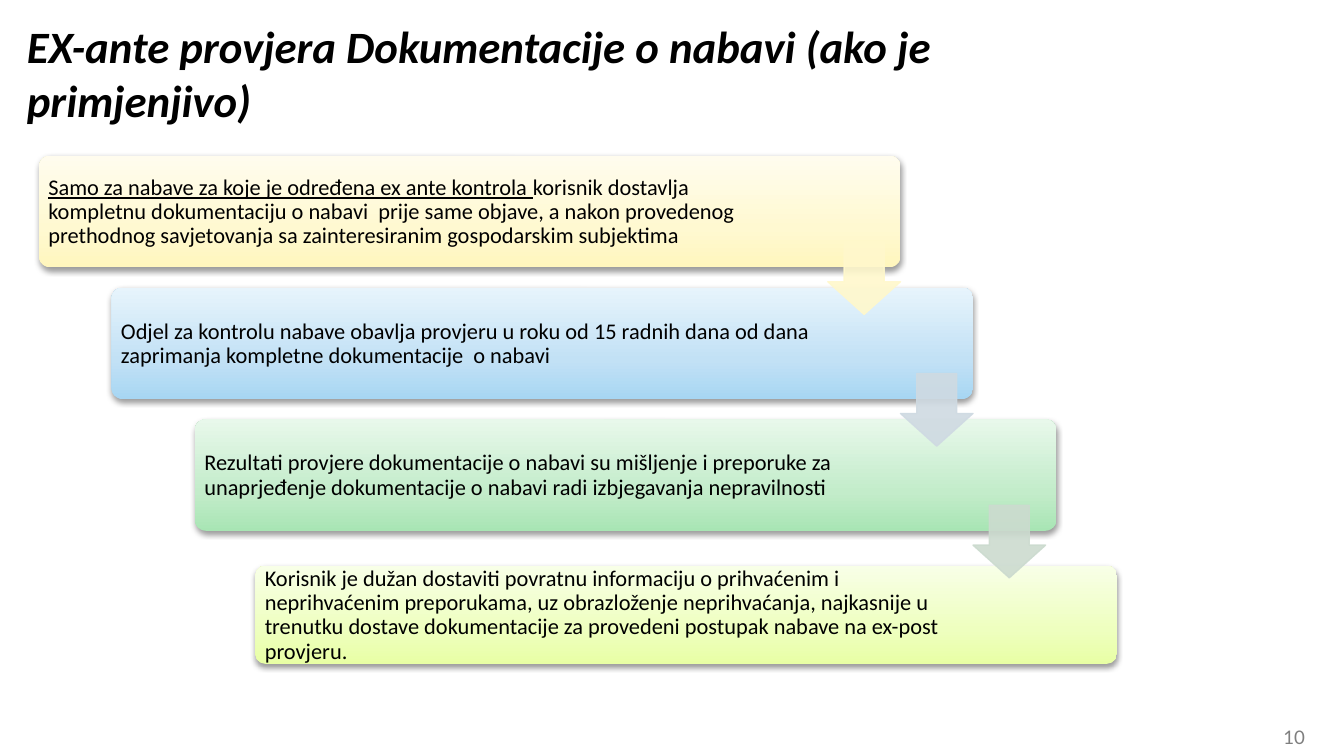
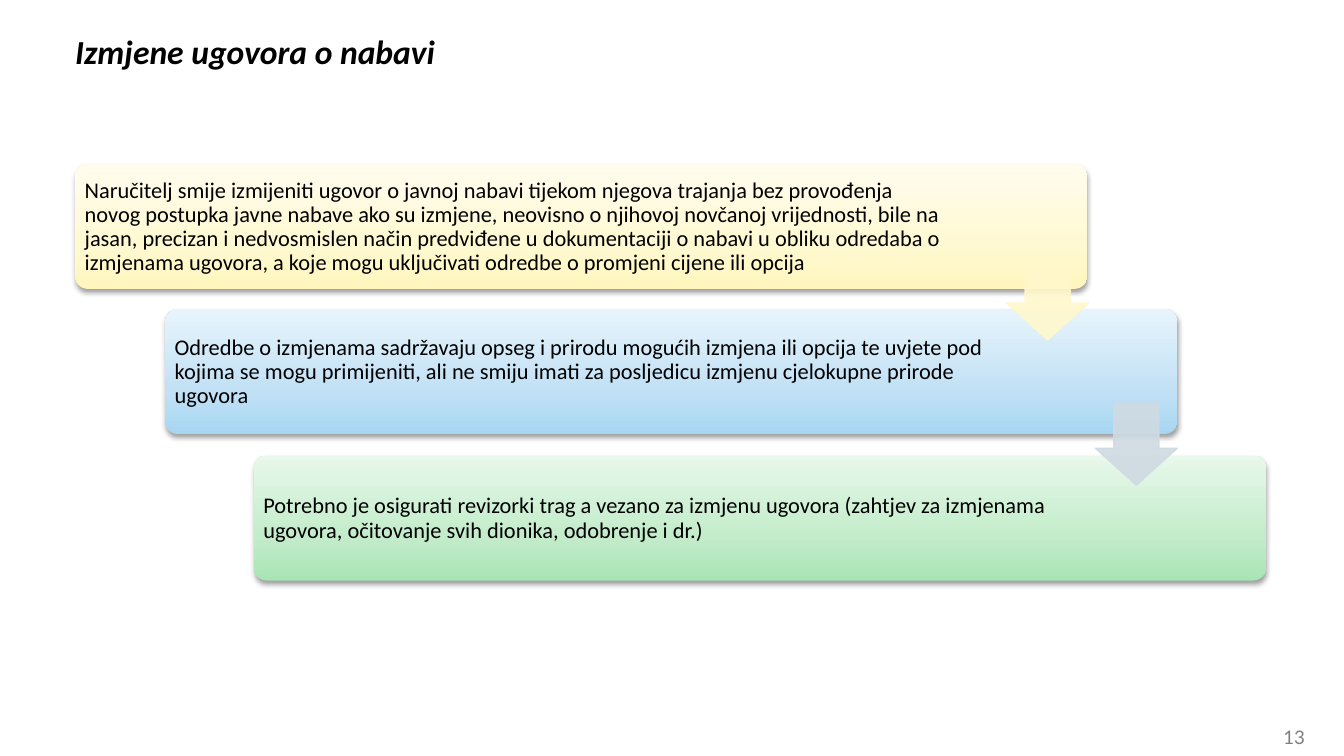
import pptx
import pptx.util
import pptx.dml.color
import pptx.enum.shapes
import pptx.enum.text
import pptx.oxml.ns
import lxml.etree

Inches = pptx.util.Inches
Pt = pptx.util.Pt
qn = pptx.oxml.ns.qn
SHAPES = pptx.enum.shapes.MSO_SHAPE
ANCHOR = pptx.enum.text.MSO_ANCHOR
ALIGN = pptx.enum.text.PP_ALIGN

BLACK = "000000"
GREY = "7F7F7F"
GRADIENTS = [
    ["FFF6BD", "FFF9D1", "FFFCEE"],
    ["A7D6F3", "C2E1F5", "E7F4FC"],
    ["A8E5B4", "C3ECCA", "E8F8EB"],
    ["E8FFA5", "EEFFBF", "F8FFE7"],
]
STOPS = [0, 35000, 100000]
ARROW_COLOURS = ["FFF8CC", "CFDAE2", "CCDBCF"]
TEXT_LEFT = 0.02
TEXT_TOP = 0.03

slides = [
    {
        "number": "10",
        "title": "EX-ante provjera Dokumentacije o nabavi (ako je primjenjivo)",
        "title_place": (0.2, 0.14, 7.48, 0.7),
        "title_size": 24,
        "card_width": 6.41,
        "cards": [
            (0.29, 1.16, 0.83, 5.44, [
                ("Samo za nabave za koje je određena ex ante kontrola ", True),
                ("korisnik dostavlja kompletnu dokumentaciju o nabavi  prije same objave, "
                 "a nakon provedenog prethodnog savjetovanja sa zainteresiranim "
                 "gospodarskim subjektima", False)]),
            (0.83, 2.14, 0.83, 5.29, [
                ("Odjel za kontrolu nabave obavlja provjeru u roku od 15 radnih dana od dana "
                 "zaprimanja kompletne dokumentacije  o nabavi", False)]),
            (1.45, 3.12, 0.83, 5.29, [
                ("Rezultati provjere dokumentacije o nabavi su mišljenje i preporuke za "
                 "unaprjeđenje dokumentacije o nabavi radi izbjegavanja nepravilnosti", False)]),
            (1.9, 4.21, 0.73, 5.29, [
                ("Korisnik je dužan dostaviti povratnu informaciju o prihvaćenim i "
                 "neprihvaćenim preporukama, uz obrazloženje neprihvaćanja, najkasnije u "
                 "trenutku dostave dokumentacije za provedeni postupak nabave na ex-post "
                 "provjeru.", False)]),
        ],
        "arrow_start": (6.16, 1.8),
        "arrow_step": (0.54, 0.98),
        "arrow_size": 0.54,
    },
    {
        "number": "13",
        "title": "Izmjene ugovora o nabavi",
        "title_place": (0.56, 0.23, 8.86, 0.94),
        "title_size": 18,
        "card_width": 7.53,
        "cards": [
            (0.56, 1.22, 0.93, 6.52, [
                ("Naručitelj smije izmijeniti ugovor o javnoj nabavi tijekom njegova trajanja "
                 "bez provođenja novog postupka javne nabave ako su izmjene, neovisno o "
                 "njihovoj novčanoj vrijednosti, bile na jasan, precizan i nedvosmislen način "
                 "predviđene u dokumentaciji o nabavi u obliku odredaba o izmjenama ugovora, "
                 "a koje mogu uključivati odredbe o promjeni cijene ili opcija", False)]),
            (1.23, 2.3, 0.93, 6.2, [
                ("Odredbe o izmjenama sadržavaju opseg i prirodu mogućih izmjena ili opcija te "
                 "uvjete pod kojima se mogu primijeniti, ali ne smiju imati za posljedicu "
                 "izmjenu cjelokupne prirode ugovora", False)]),
            (1.89, 3.39, 0.93, 6.2, [
                ("Potrebno je osigurati revizorki trag a vezano za izmjenu ugovora (zahtjev za "
                 "izmjenama ugovora, očitovanje svih dionika, odobrenje i dr.)", False)]),
        ],
        "arrow_start": (7.49, 1.92),
        "arrow_step": (0.66, 1.08),
        "arrow_size": 0.61,
    },
]


def colour(value):
    return pptx.dml.color.RGBColor.from_string(value)


def add_text(page, place, runs, size, font="Calibri", ink=BLACK, strong=False, inset=0):
    box = page.shapes.add_textbox(*[Inches(value) for value in place])
    frame = box.text_frame
    frame.word_wrap = True
    frame.margin_left = frame.margin_right = Inches(inset)
    frame.margin_top = frame.margin_bottom = Inches(inset)
    para = frame.paragraphs[0]
    for text, underlined in runs:
        span = para.add_run()
        span.text = text
        span.font.name = font
        span.font.size = Pt(size)
        span.font.color.rgb = colour(ink)
        if strong:
            span.font.bold = True
            span.font.italic = True
        if underlined:
            span.font.underline = True
    return frame


deck = pptx.Presentation()
deck.slide_width = Inches(10)
deck.slide_height = Inches(10 * 9 / 16)

for content in slides:
    page = deck.slides.add_slide(deck.slide_layouts[6])
    add_text(page, content["title_place"], [(content["title"], False)],
             content["title_size"], strong=True)
    footer = add_text(page, (7.57, 5.4, 2.14, 0.23), [(content["number"], False)],
                      10, font="Lato", ink=GREY)
    footer.paragraphs[0].alignment = ALIGN.RIGHT

    for (left, top, height, text_width, runs), shades in zip(content["cards"], GRADIENTS):
        card = page.shapes.add_shape(SHAPES.ROUNDED_RECTANGLE, Inches(left), Inches(top),
                                     Inches(content["card_width"]), Inches(height))
        card.adjustments[0] = 0.1
        card.line.fill.background()
        card.fill.gradient()
        card.fill.gradient_angle = 90
        properties = card._element.spPr
        stop_list = properties.find(".//" + qn("a:gsLst"))
        for stop in list(stop_list):
            stop_list.remove(stop)
        for position, shade in zip(STOPS, shades):
            stop = lxml.etree.SubElement(stop_list, qn("a:gs"), pos=str(position))
            lxml.etree.SubElement(stop, qn("a:srgbClr"), val=shade)
        card.shadow.inherit = False
        shadow = lxml.etree.SubElement(properties.find(qn("a:effectLst")), qn("a:outerShdw"),
                                       blurRad=str(Pt(3.1)), dist=str(Pt(1.6)),
                                       dir="5400000", rotWithShape="0")
        tint = lxml.etree.SubElement(shadow, qn("a:srgbClr"), val=BLACK)
        lxml.etree.SubElement(tint, qn("a:alpha"), val="38000")

        place = (left + TEXT_LEFT, top + TEXT_TOP, text_width, height - 0.05)
        frame = add_text(page, place, runs, 12, inset=0.05)
        frame.vertical_anchor = ANCHOR.MIDDLE
        frame.paragraphs[0].line_spacing = 0.9
        frame.paragraphs[0].space_after = Pt(4.2)

    arrow_left, arrow_top = content["arrow_start"]
    step_right, step_down = content["arrow_step"]
    size = Inches(content["arrow_size"])
    for index in range(len(content["cards"]) - 1):
        arrow = page.shapes.add_shape(SHAPES.DOWN_ARROW,
                                      Inches(arrow_left + index * step_right),
                                      Inches(arrow_top + index * step_down), size, size)
        arrow.adjustments[0] = 0.55
        arrow.adjustments[1] = 0.45
        arrow.shadow.inherit = False
        arrow.fill.solid()
        arrow.fill.fore_color.rgb = colour(ARROW_COLOURS[index])
        arrow.line.color.rgb = colour(ARROW_COLOURS[index])
        arrow.line.width = Pt(0.75)
        for tint in arrow._element.spPr.iter(qn("a:srgbClr")):
            lxml.etree.SubElement(tint, qn("a:alpha"), val="90000")

deck.save("out.pptx")
